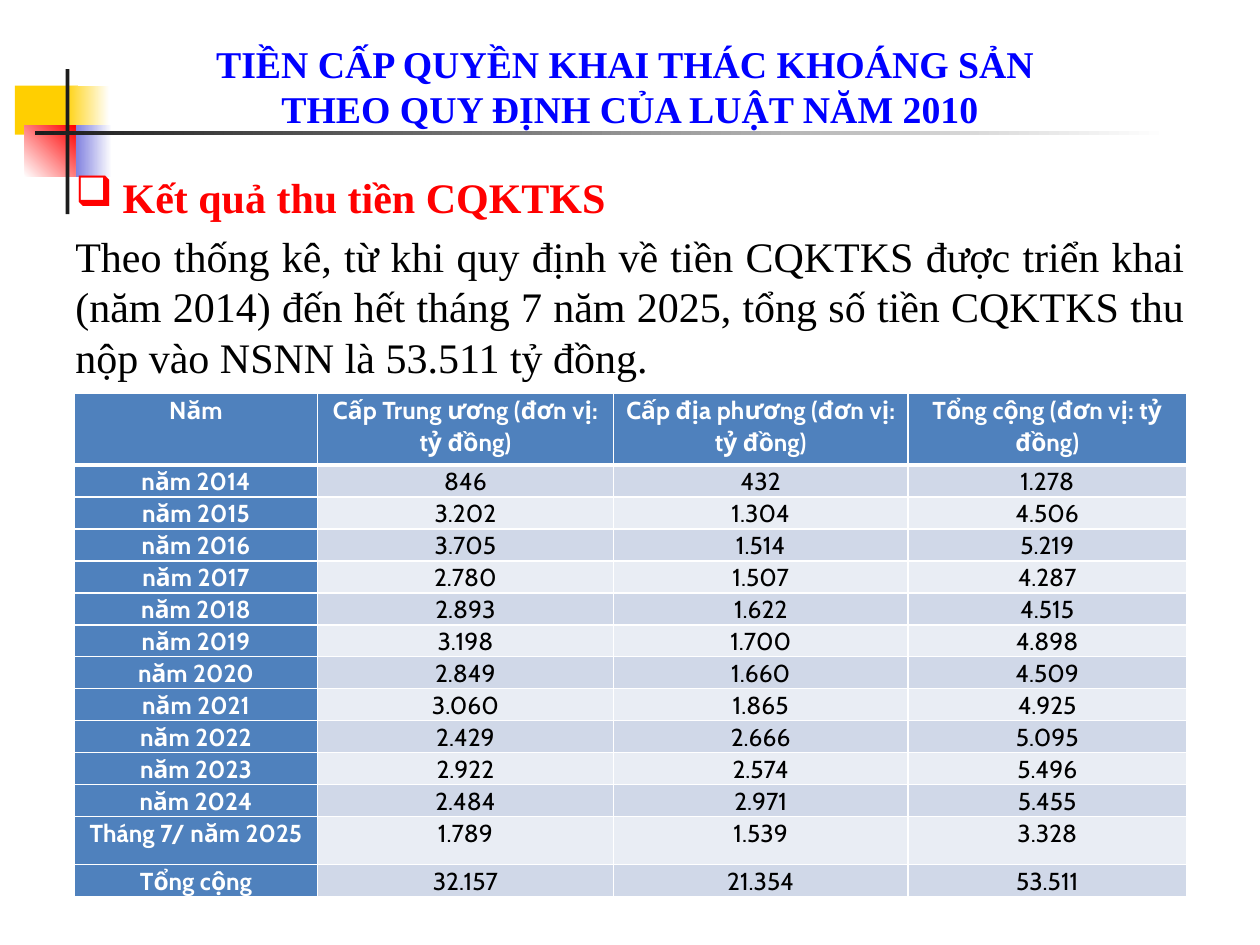
from lxml import etree
from pptx import Presentation
from pptx.dml.color import RGBColor
from pptx.enum import shapes, text
from pptx.oxml import ns
from pptx.util import Pt

# Content
TITLE = "TIỀN CẤP QUYỀN KHAI THÁC KHOÁNG SẢN \vTHEO QUY ĐỊNH CỦA LUẬT NĂM 2010"
HEADING = "Kết quả thu tiền CQKTKS"
SUMMARY = ("Theo thống kê, từ khi quy định về tiền CQKTKS được triển khai "
           "(năm 2014) đến hết tháng 7 năm 2025, tổng số tiền CQKTKS thu "
           "nộp vào NSNN là 53.511 tỷ đồng.")
ROWS = [
    ("Năm", "Cấp Trung ương (đơn vị: tỷ đồng)",
     "Cấp địa phương (đơn vị: tỷ đồng)", "Tổng cộng (đơn vị: tỷ đồng)"),
    ("năm 2014", "846", "432", "1.278"),
    ("năm 2015", "3.202", "1.304", "4.506"),
    ("năm 2016", "3.705", "1.514", "5.219"),
    ("năm 2017", "2.780", "1.507", "4.287"),
    ("năm 2018", "2.893", "1.622", "4.515"),
    ("năm 2019", "3.198", "1.700", "4.898"),
    ("năm 2020", "2.849", "1.660", "4.509"),
    ("năm 2021", "3.060", "1.865", "4.925"),
    ("năm 2022", "2.429", "2.666", "5.095"),
    ("năm 2023", "2.922", "2.574", "5.496"),
    ("năm 2024", "2.484", "2.971", "5.455"),
    ("Tháng 7/ năm 2025", "1.789", "1.539", "3.328"),
    ("Tổng cộng", "32.157", "21.354", "53.511"),
]
COLUMN_WIDTHS = (139, 169, 168.5, 159)
ROW_HEIGHTS = [41] + [15] * 11 + [27.5, 15]
HEADER_FILL, BAND_FILLS = "4F81BD", ("E9EDF4", "D0D8E8")

# Corner ornament: left, top, width, height, colours, gradient angle
ORNAMENT = [
    (8.5, 49, 36, 28, ["FFCF01"], 0),
    (36.5, 49, 26, 31, ["FFCF01", "FFFFFF"], 0),
    (31, 71.5, 33, 29.5, ["3333CC", "FFFFFF"], 0),
    (14, 71.5, 29, 29.5, ["FFFFFF", "FF0000"], 45),
    (37.5, 39.5, 2.25, 83, ["1C1C1C"], 0),
    (19.75, 75, 648, 2.25, ["1C1C1C", "FFFFFF"], 0),
]


def color(code):
    return RGBColor.from_string(code)


def write(para, words, size=24, font="Times New Roman", ink="000000", bold=False,
          align=text.PP_ALIGN.CENTER, before=0, after=0, spacing=1.0):
    para.text = words
    para.alignment = align
    para.space_before, para.space_after = Pt(before), Pt(after)
    para.line_spacing = spacing
    for span in para.runs:
        span.font.size, span.font.name, span.font.bold = Pt(size), font, bold
        span.font.color.rgb = color(ink)


def add_bullet(para, mark, indent):
    props = para._p.get_or_add_pPr()
    props.set("marL", str(Pt(indent)))
    props.set("indent", str(-Pt(indent)))
    etree.SubElement(props, ns.qn("a:buChar"), char=mark)


def add_borders(cell, widths):
    props = cell._tc.get_or_add_tcPr()
    for side, width in widths.items():
        line = etree.SubElement(props, ns.qn("a:ln" + side), w=str(Pt(width)))
        solid = etree.SubElement(line, ns.qn("a:solidFill"))
        etree.SubElement(solid, ns.qn("a:srgbClr"), val="FFFFFF")


def add_ornament(page):
    for left, top, width, height, colors, angle in ORNAMENT:
        box = page.shapes.add_shape(shapes.MSO_SHAPE.RECTANGLE, Pt(left), Pt(top),
                                    Pt(width), Pt(height))
        box.shadow.inherit = False
        box.line.fill.background()
        if len(colors) == 1:
            box.fill.solid()
            box.fill.fore_color.rgb = color(colors[0])
        else:
            box.fill.gradient()
            box.fill.gradient_angle = angle
            for stop, code in zip(box.fill.gradient_stops, colors):
                stop.color.rgb = color(code)


def add_body(page):
    frame = page.shapes.add_textbox(Pt(36), Pt(94.5), Pt(648), Pt(388)).text_frame
    frame.word_wrap = True
    justify = text.PP_ALIGN.JUSTIFY
    write(frame.paragraphs[0], HEADING, ink="FF0000", bold=True, align=justify, before=4.8)
    add_bullet(frame.paragraphs[0], "❑", 27)
    write(frame.add_paragraph(), SUMMARY, align=justify, before=4.8)


def place_title(page):
    title = page.shapes.title
    title.left, title.top, title.width, title.height = Pt(36), Pt(21.5), Pt(648), Pt(55.5)
    title.text_frame.word_wrap = True
    title.text_frame.auto_size = text.MSO_AUTO_SIZE.NONE
    title.text_frame.vertical_anchor = text.MSO_ANCHOR.MIDDLE
    write(title.text_frame.paragraphs[0], TITLE, size=21.6, ink="0000FF", bold=True)
    # Bring the title in front of the ornament
    title.element.getparent().append(title.element)


def add_revenue_table(page):
    table = page.shapes.add_table(len(ROWS), len(COLUMN_WIDTHS), Pt(42.5), Pt(224.75),
                                  Pt(sum(COLUMN_WIDTHS)), Pt(sum(ROW_HEIGHTS))).table
    for column, width in zip(table.columns, COLUMN_WIDTHS):
        column.width = Pt(width)
    for row, height in zip(table.rows, ROW_HEIGHTS):
        row.height = Pt(height)
    for r, values in enumerate(ROWS):
        for c, value in enumerate(values):
            cell = table.cell(r, c)
            header = r == 0 or c == 0
            cell.margin_left = cell.margin_right = Pt(5)
            cell.margin_top = cell.margin_bottom = 0
            add_borders(cell, {"L": 1, "R": 1, "T": 3 if r == 1 else 1,
                               "B": 3 if r == 0 else 1})
            cell.fill.solid()
            cell.fill.fore_color.rgb = color(HEADER_FILL if header else BAND_FILLS[r % 2])
            write(cell.text_frame.paragraphs[0], value, size=14, font="Cabin",
                  ink="FFFFFF" if header else "000000", bold=header,
                  before=3, after=3, spacing=1.07)


def main():
    deck = Presentation()
    deck.slide_width, deck.slide_height = Pt(720), Pt(540)
    page = deck.slides.add_slide(deck.slide_layouts[5])
    add_ornament(page)
    add_body(page)
    place_title(page)
    add_revenue_table(page)
    deck.save("out.pptx")


if __name__ == "__main__":
    main()
